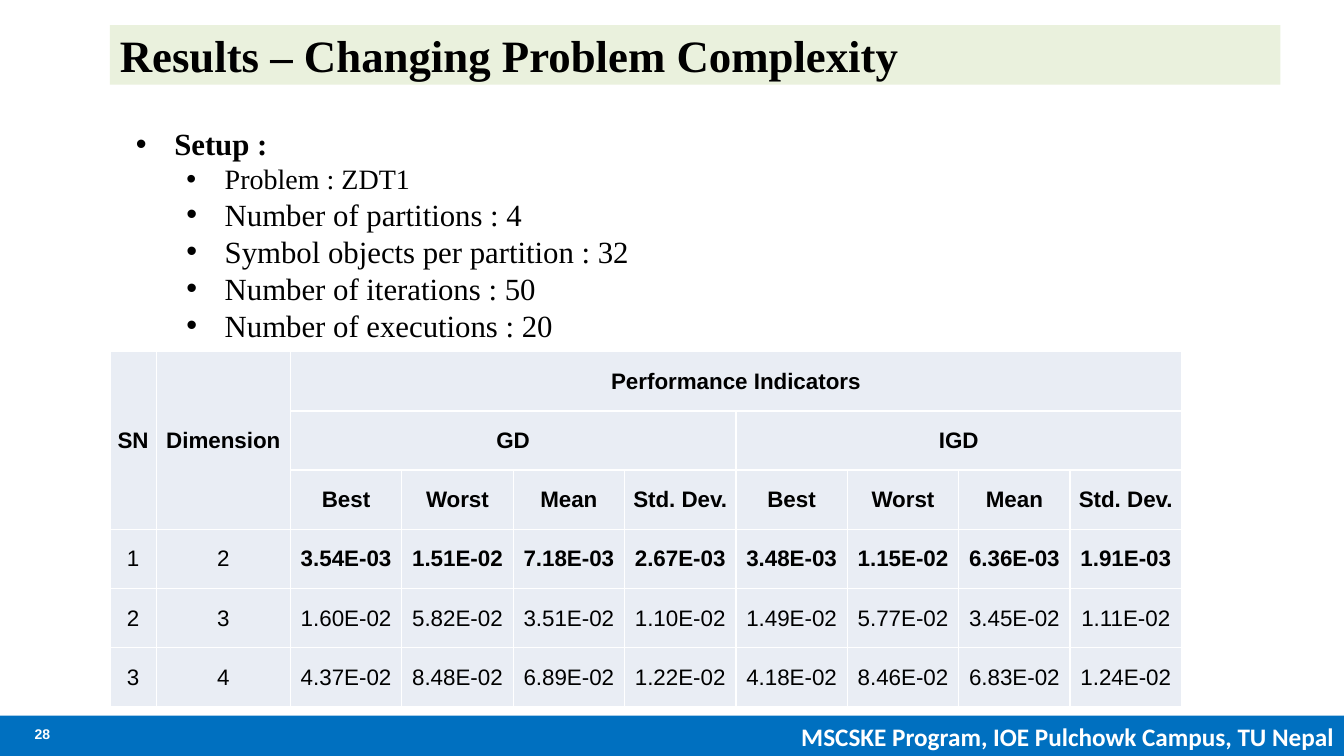
from lxml import etree
from pptx import Presentation
from pptx.dml.color import RGBColor
from pptx.enum.shapes import MSO_SHAPE
from pptx.enum.text import MSO_ANCHOR, PP_ALIGN
from pptx.oxml.ns import qn
from pptx.util import Inches, Pt

RECT = MSO_SHAPE.RECTANGLE
LEFT, MID, RIGHT = PP_ALIGN.LEFT, PP_ALIGN.CENTER, PP_ALIGN.RIGHT
TOP, CENTER = MSO_ANCHOR.TOP, MSO_ANCHOR.MIDDLE
SERIF, SANS = "Times New Roman", "Arial"
HUES = {"bar": "0070C0", "title": "EAF1DD", "cell": "E9EDF4",
        "ink": "000000", "white": "FFFFFF"}

deck = Presentation()
deck.slide_width, deck.slide_height = Inches(13.33), Inches(7.5)
slide = deck.slides.add_slide(deck.slide_layouts[6])


def place(x, y, w, h, fill=None):
    """Add a box whose place is in percent of the slide's size."""
    wide, high = deck.slide_width / 100, deck.slide_height / 100
    spot = int(x * wide), int(y * high), int(w * wide), int(h * high)
    if fill is None:
        shape = slide.shapes.add_textbox(*spot)
    else:
        shape = slide.shapes.add_shape(RECT, *spot)
        shape.shadow.inherit = False
        shape.fill.solid()
        shape.fill.fore_color.rgb = RGBColor.from_string(HUES[fill])
        shape.line.fill.background()
    shape.text_frame.word_wrap = True
    shape.text_frame.vertical_anchor = TOP
    return shape.text_frame


def write(para, text, font=SANS, size=16, bold=True, hue="ink", align=LEFT):
    para.alignment = align
    run = para.add_run()
    run.text = text
    run.font.name, run.font.size, run.font.bold = font, Pt(size), bold
    run.font.color.rgb = RGBColor.from_string(HUES[hue])


# Footer
place(0, 94.67, 100, 5.33, "bar")
page = place(1.28, 95.33, 3.75, 3.73)
write(page.paragraphs[0], "28", size=10, hue="white", align=MID)
foot = place(6.23, 94.8, 93.77, 5.2, "bar")
write(foot.paragraphs[0], "MSCSKE Program, IOE Pulchowk Campus, TU Nepal",
      font="Calibri", size=18, hue="white", align=RIGHT)

# Title
title = place(8.18, 3.33, 87.1, 7.87, "title")
title.vertical_anchor = CENTER
write(title.paragraphs[0], "Results – Changing Problem Complexity",
      font=SERIF, size=32)

# Setup list: text, level, size
setup = [
    ("Setup :", 0, 22),
    ("Problem : ZDT1", 1, 20),
    ("Number of partitions : 4", 1, 22),
    ("Symbol objects per partition : 32", 1, 22),
    ("Number of iterations : 50", 1, 22),
    ("Number of executions : 20", 1, 22),
]
body = place(8.18, 15.87, 87.1, 73.47)
for i, (text, level, size) in enumerate(setup):
    para = body.add_paragraph() if i else body.paragraphs[0]
    para.level = level
    props = para._p.get_or_add_pPr()
    props.set("marL", str(Inches(0.54 + 0.5 * level)))
    props.set("indent", str(Inches(-0.38)))
    tint = etree.SubElement(props, qn("a:buClr"))
    etree.SubElement(tint, qn("a:srgbClr"), val=HUES["ink"])
    etree.SubElement(props, qn("a:buFont"), typeface=SANS)
    etree.SubElement(props, qn("a:buChar"), char="•")
    para.space_before = Pt(0)
    write(para, text, font=SERIF, size=size, bold=level == 0)

# Results table
stats = ["Best", "Worst", "Mean", "Std. Dev."]
rows = [
    ["SN", "Dimension", "Performance Indicators"] + [""] * 7,
    ["", "", "GD", "", "", "", "IGD", "", "", ""],
    ["", ""] + stats * 2,
    ["1", "2", "3.54E-03", "1.51E-02", "7.18E-03", "2.67E-03",
     "3.48E-03", "1.15E-02", "6.36E-03", "1.91E-03"],
    ["2", "3", "1.60E-02", "5.82E-02", "3.51E-02", "1.10E-02",
     "1.49E-02", "5.77E-02", "3.45E-02", "1.11E-02"],
    ["3", "4", "4.37E-02", "8.48E-02", "6.89E-02", "1.22E-02",
     "4.18E-02", "8.46E-02", "6.83E-02", "1.24E-02"],
]
count = len(rows[0])
wide, high = Inches(10.63), Inches(3.52)
table = slide.shapes.add_table(len(rows), count, Inches(1.09), Inches(3.49),
                               wide, high).table
first = [Inches(0.46), Inches(1.33)]
rest = (wide - sum(first)) // (count - 2)
for col, width in zip(table.columns, first + [rest] * (count - 2)):
    col.width = width
for row in table.rows:
    row.height = high // len(rows)

# Merged headings: top, left, bottom, right
for top, left, low, right in [(0, 0, 2, 0), (0, 1, 2, 1), (0, 2, 0, 9),
                              (1, 2, 1, 5), (1, 6, 1, 9)]:
    table.cell(top, left).merge(table.cell(low, right))

# Cell text, borders and fill
for r, row in enumerate(rows):
    for c, text in enumerate(row):
        cell = table.cell(r, c)
        cell.vertical_anchor = CENTER
        cell.margin_left = cell.margin_right = cell.margin_top = Inches(0.01)
        cell.margin_bottom = 0
        if text:
            strong = r < 3 or (r == 3 and c > 1)
            write(cell.text_frame.paragraphs[0], text, bold=strong, align=MID)
        props = cell._tc.get_or_add_tcPr()
        for side in ("lnL", "lnR", "lnT", "lnB"):
            edge = etree.SubElement(props, qn("a:" + side), w=str(Pt(1)))
            paint = etree.SubElement(edge, qn("a:solidFill"))
            etree.SubElement(paint, qn("a:srgbClr"), val=HUES["white"])
        cell.fill.solid()
        cell.fill.fore_color.rgb = RGBColor.from_string(HUES["cell"])

deck.save("out.pptx")
